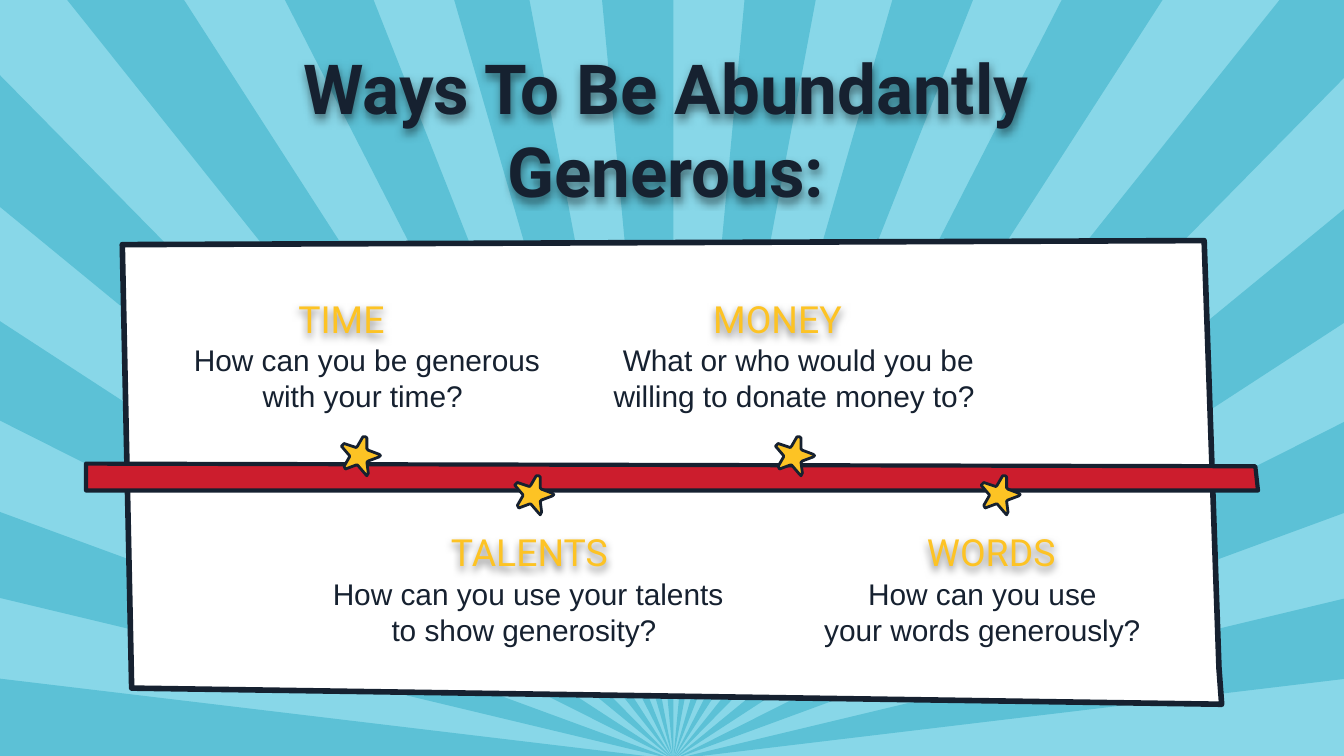
from lxml.etree import SubElement
from pptx import Presentation
from pptx.dml.color import RGBColor
from pptx.enum.text import MSO_ANCHOR, MSO_AUTO_SIZE, PP_ALIGN
from pptx.oxml.ns import qn
from pptx.util import Inches, Pt

COLORS = {
    "sky": "88D7E8",
    "ray": "5CC1D6",
    "card": "FFFFFF",
    "ink": "162130",
    "ribbon": "CC1D2D",
    "gold": "FDC324",
    "shadow": "000000",
}

# Sunburst: every ray runs from the slide edge to the hub
HUB = (5.01, 5.65)
RIGHT = 10.02
RAY_EDGES = [
    [(0, 0.56), (0, 1.54)],
    [(0, 2.39), (0, 3.13)],
    [(0, 3.81), (0, 4.45)],
    [(0, 5.05), (0, 5.65)],
    [(0.5, 0), (1.37, 0)],
    [(2.12, 0), (2.78, 0)],
    [(3.38, 0), (3.94, 0)],
    [(4.48, 0), (5.01, 0)],
    [(5.54, 0), (6.07, 0)],
    [(6.64, 0), (7.24, 0)],
    [(7.9, 0), (8.65, 0)],
    [(9.52, 0), (RIGHT, 0), (RIGHT, 0.56)],
    [(RIGHT, 1.54), (RIGHT, 2.39)],
    [(RIGHT, 3.13), (RIGHT, 3.81)],
    [(RIGHT, 4.45), (RIGHT, 5.05)],
]

CARD = [(8.96, 1.79), (0.91, 1.82), (0.98, 5.12), (9.09, 5.24), (9.07, 4.97)]
RIBBON = [(0.64, 3.45), (0.64, 3.65), (9.36, 3.65), (9.34, 3.47)]
STAR = [
    (0.18, 0), (0.16, 0), (0.12, 0.07), (0.11, 0.08), (0.02, 0.05), (0, 0.07),
    (0.06, 0.14), (0.06, 0.15), (0.02, 0.22), (0.03, 0.24), (0.11, 0.21),
    (0.12, 0.21), (0.18, 0.28), (0.19, 0.29), (0.2, 0.27), (0.19, 0.19),
    (0.2, 0.18), (0.28, 0.15), (0.29, 0.14), (0.28, 0.13), (0.2, 0.1),
    (0.19, 0.09), (0.19, 0.01),
]

# Star top, heading top and question top of each row
ROWS = {"above": (3.25, 2.1, 2.6), "below": (3.54, 3.84, 4.34)}

# Row, star left, heading, its left and width, question, its left and width
WAYS = [
    ("above", 2.54, "TIME ", 1.83, 1.49,
     "How can you be generous with your time? ", 1.22, 3.02),
    ("below", 3.83, "TALENTS", 3.01, 1.86,
     "How can you use your talents to show generosity? ", 2.31, 3.24),
    ("above", 5.77, "MONEY", 5.04, 1.49,
     "What or who would you be willing to donate money to? ", 4.43, 3.02),
    ("below", 7.3, "WORDS", 6.63, 1.49,
     "How can you use \vyour words generously? ", 5.72, 3.24),
]

FRAME_FORMAT = {
    "word_wrap": True,
    "auto_size": MSO_AUTO_SIZE.NONE,
    "margin_left": Inches(0.1),
    "margin_right": Inches(0.1),
    "margin_top": Inches(0.1),
    "margin_bottom": Inches(0.1),
}
TITLE_FONT = {"name": "Roboto", "size": Pt(37), "bold": True}
HEADING_FONT = {"name": "Roboto", "size": Pt(20), "bold": False}
QUESTION_FONT = {"name": "Arial", "size": Pt(16), "bold": False}


def rgb(color):
    return RGBColor.from_string(COLORS[color])


def set_format(target, values):
    for attribute, value in values.items():
        setattr(target, attribute, value)


def add_outline(slide, points, color, line_width=None):
    """Add a closed polygon, with an ink outline if a width is given."""
    corners = [(Inches(x), Inches(y)) for x, y in points]
    builder = slide.shapes.build_freeform(*corners[0])
    builder.add_line_segments(corners[1:], close=True)
    polygon = builder.convert_to_shape()
    polygon.shadow.inherit = False
    polygon.fill.solid()
    polygon.fill.fore_color.rgb = rgb(color)
    if line_width is None:
        polygon.line.fill.background()
    else:
        polygon.line.color.rgb = rgb("ink")
        polygon.line.width = Pt(line_width)
        SubElement(polygon.line._get_or_add_ln(), qn("a:round"))


def add_text_shadow(holder):
    """An unfilled shape casts the shadow of its text."""
    holder.fill.background()
    effects = SubElement(holder._element.spPr, qn("a:effectLst"))
    shadow = SubElement(effects, qn("a:outerShdw"), blurRad=str(Pt(4.5)),
                        dist=str(Inches(0.03)), dir="5400000",
                        algn="bl", rotWithShape="0")
    shade = SubElement(shadow, qn("a:srgbClr"), val=COLORS["shadow"])
    SubElement(shade, qn("a:alpha"), val="50000")


def fill_text(holder, text, font, color, anchor=MSO_ANCHOR.TOP):
    frame = holder.text_frame
    set_format(frame, FRAME_FORMAT)
    frame.vertical_anchor = anchor
    paragraph = frame.paragraphs[0]
    paragraph.text = text
    paragraph.alignment = PP_ALIGN.CENTER
    for run in paragraph.runs:
        set_format(run.font, font)
        run.font.color.rgb = rgb(color)


def add_label(slide, left, top, width):
    return slide.shapes.add_textbox(
        Inches(left), Inches(top), Inches(width), Inches(0.42))


def place_title(slide):
    title = slide.shapes.title
    set_format(title, {"left": Inches(1.32), "top": Inches(0.24),
                       "width": Inches(7.27), "height": Inches(1.05)})
    fill_text(title, "Ways To Be Abundantly Generous:", TITLE_FONT, "ink")
    add_text_shadow(title)
    # Bring the title in front of the rays
    slide.shapes._spTree.append(title._element)


def add_way(slide, way):
    row, star_left, heading, heading_left, heading_width, *rest = way
    question, question_left, question_width = rest
    star_top, heading_top, question_top = ROWS[row]

    star = [(star_left + x, star_top + y) for x, y in STAR]
    add_outline(slide, star, "gold", 1.5)

    question_label = add_label(slide, question_left, question_top, question_width)
    fill_text(question_label, question, QUESTION_FONT, "ink", MSO_ANCHOR.MIDDLE)

    heading_label = add_label(slide, heading_left, heading_top, heading_width)
    fill_text(heading_label, heading, HEADING_FONT, "gold")
    add_text_shadow(heading_label)


def main():
    deck = Presentation()
    # Widescreen, 16 to 9
    deck.slide_width, deck.slide_height = Inches(10), Inches(10 * 9 / 16)
    slide = deck.slides.add_slide(deck.slide_layouts[5])

    # Sunburst background
    slide.background.fill.solid()
    slide.background.fill.fore_color.rgb = rgb("sky")
    for edge in RAY_EDGES:
        add_outline(slide, [*edge, HUB], "ray")

    # Card, title and ribbon
    add_outline(slide, CARD, "card", 3)
    place_title(slide)
    add_outline(slide, RIBBON, "ribbon", 2.25)

    # Ways to be generous
    for way in WAYS:
        add_way(slide, way)

    deck.save("out.pptx")


if __name__ == "__main__":
    main()
